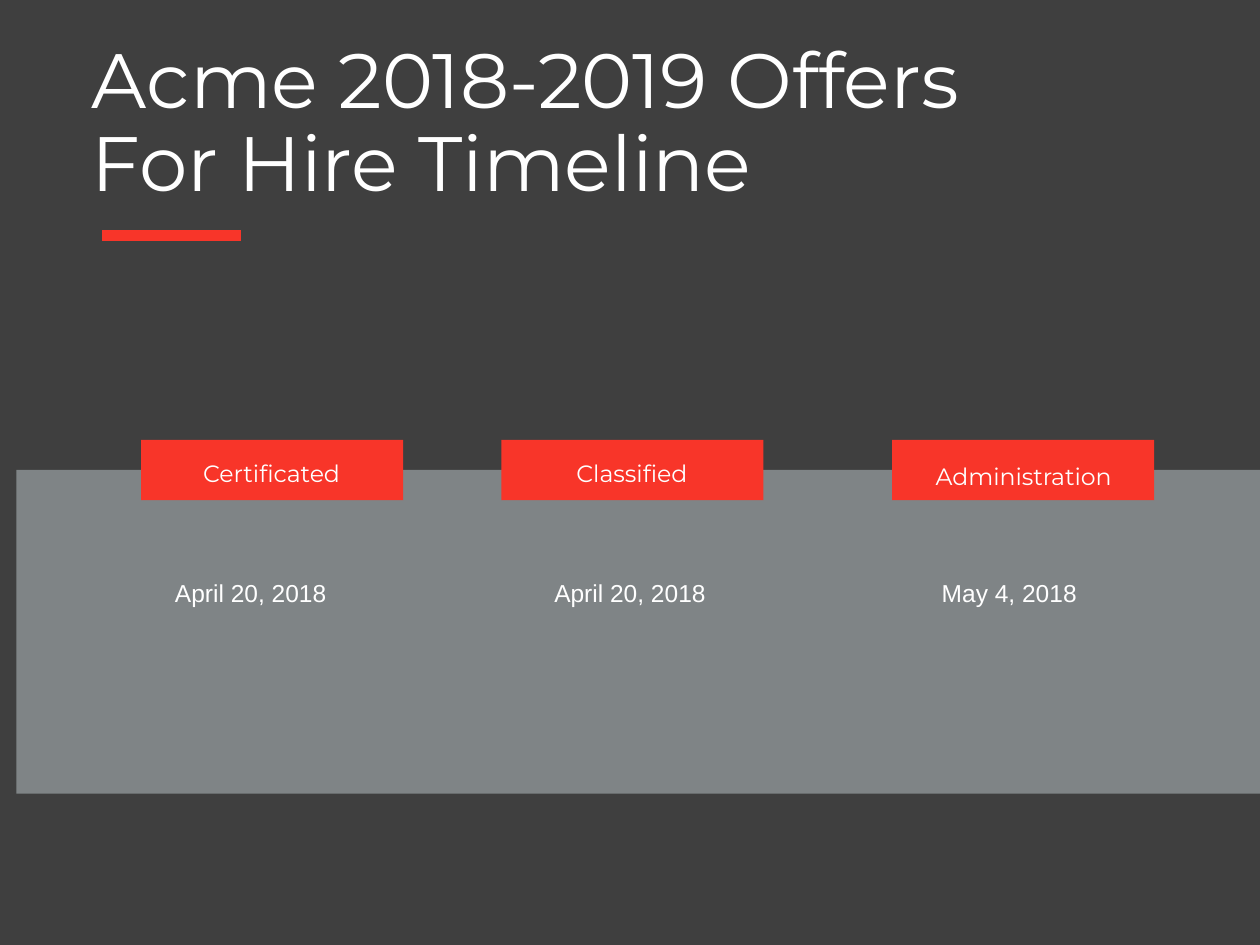
from lxml import etree
from pptx import Presentation
from pptx.dml.color import RGBColor
from pptx.enum.shapes import MSO_CONNECTOR, MSO_SHAPE
from pptx.enum.text import MSO_ANCHOR, PP_ALIGN
from pptx.oxml.ns import qn
from pptx.util import Inches, Pt

RECT, LINE = MSO_SHAPE.RECTANGLE, MSO_CONNECTOR.STRAIGHT
TOP, MIDDLE = MSO_ANCHOR.TOP, MSO_ANCHOR.MIDDLE
LEFT, CENTER = PP_ALIGN.LEFT, PP_ALIGN.CENTER
COLS, ROWS = 10, 7.5
DARK, PALE, RED, WHITE = "3F3F3F", "CFDADE", "F83529", "FFFFFF"
HEAD, BODY = "Montserrat", "Arial"
TAG_W, TAG_H = 2.08, 0.48
DATE_W, DATE_H, DATE_GAP = 2.32, 0.9, 3.01
STEPS = [
    ("Certificated", "April 20, 2018", 0.99, (0.24, 0.1, 1.59, 0.33)),
    ("Classified", "April 20, 2018", 3.85, (0.47, 0.1, 1.13, 0.66)),
    ("Administration", "May 4, 2018", 6.95, (0.18, 0.13, 1.73, 0.25)),
]


def paint(fmt, color):
    """Give a fill or line format one solid colour."""
    fmt.solid()
    fmt.fore_color.rgb = RGBColor.from_string(color)


def panel(slide, x, y, w, h, color, alpha=None):
    """Add a plain rectangle, see-through if alpha is given in percent."""
    shape = slide.shapes.add_shape(RECT, *map(Inches, (x, y, w, h)))
    shape.shadow.inherit = False
    shape.line.fill.background()
    paint(shape.fill, color)
    if alpha:
        tint = next(shape.fill._xPr.iter(qn("a:srgbClr")))
        etree.SubElement(tint, qn("a:alpha"), val=str(alpha * 1000))


def label(slide, box, text, size, font, align=CENTER, anchor=TOP, lead=1.0):
    """Add one wrapped paragraph of white text."""
    frame = slide.shapes.add_textbox(*map(Inches, box)).text_frame
    frame.word_wrap = True
    frame.vertical_anchor = anchor
    para = frame.paragraphs[0]
    para.text = text
    para.alignment = align
    para.line_spacing = lead
    para.font.size = Pt(size)
    para.font.name = font
    para.font.color.rgb = RGBColor.from_string(WHITE)


def header(slide, x, y, w, h):
    """Place the title and the short rule below it."""
    label(slide, (x, y, w, h), "Acme 2018-2019 Offers For Hire Timeline",
          44, HEAD, LEFT, MIDDLE, 0.9)
    left, base = x + 0.18, y + h + 0.15
    rule = slide.shapes.add_connector(
        LINE, *map(Inches, (left, base, left + 1.1, base)))
    paint(rule.line.fill, RED)
    rule.line.width = Pt(6.25)
    etree.SubElement(rule._element.spPr, qn("a:effectLst"))


def timeline(slide, x, y, w, h):
    """Place the band with its tags and dates."""
    panel(slide, x, y, w, h, PALE, 45)
    tag_y = y - TAG_H / 2
    for i, (name, date, shift, (dx, dy, tw, th)) in enumerate(STEPS):
        tag_x = x + shift
        panel(slide, tag_x, tag_y, TAG_W, TAG_H, RED)
        label(slide, (tag_x + dx, tag_y + dy, tw, th), name, 13.5, HEAD)
        label(slide, (x + 0.7 + i * DATE_GAP, y + 0.69, DATE_W, DATE_H),
              date, 14, BODY, lead=1.5)


def main():
    """Build and save the slide."""
    deck = Presentation()
    deck.slide_width, deck.slide_height = Inches(COLS), Inches(ROWS)
    slide = deck.slides.add_slide(deck.slide_layouts[6])
    paint(slide.background.fill, DARK)
    header(slide, 0.63, 0.27, 7.58, 1.45)
    timeline(slide, 0.13, 3.73, COLS - 0.13, 2.57)
    deck.save("out.pptx")


if __name__ == "__main__":
    main()
